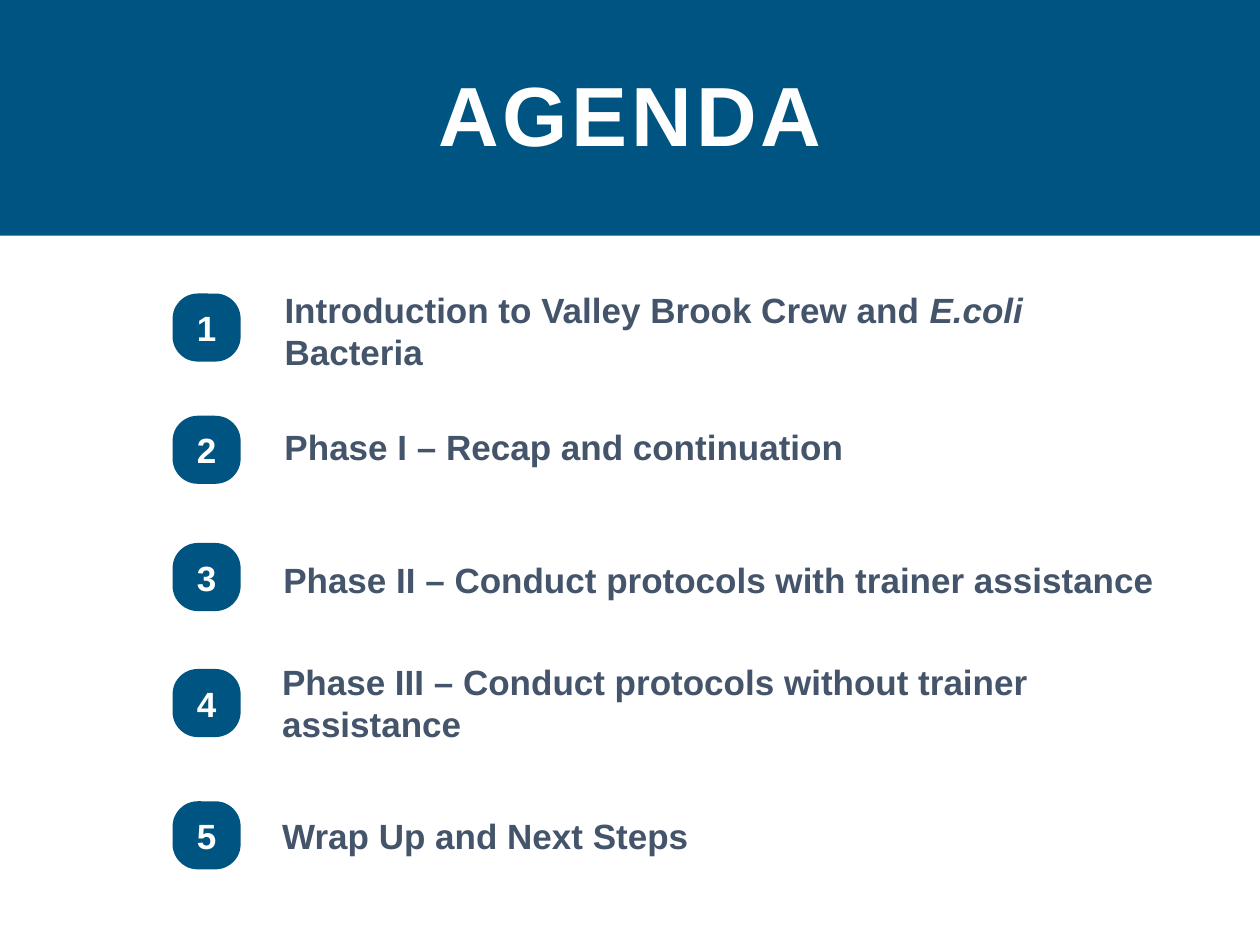
from dataclasses import dataclass
from typing import Optional

from pptx import Presentation
from pptx.dml.color import RGBColor
from pptx.enum.shapes import MSO_SHAPE
from pptx.enum.text import MSO_ANCHOR, PP_ALIGN
from pptx.util import Emu, Pt

PX = 9144
COLORS = {"blue": "005481", "slate": "44546A", "white": "FFFFFF"}
BADGE_LEFT, BADGE_SIZE = 137, 54


@dataclass
class AgendaItem:
    badge_top: int
    left: int
    top: int
    width: int
    height: int
    text: str
    italic: Optional[str] = None


ITEMS = [
    AgendaItem(233, 216, 224, 692, 77,
               "Introduction to Valley Brook Crew and E.coli Bacteria", "E.coli "),
    AgendaItem(330, 216, 332, 467, 44, "Phase I – Recap and continuation"),
    AgendaItem(431, 215, 438, 724, 44,
               "Phase II – Conduct protocols with trainer assistance"),
    AgendaItem(531, 214, 519, 668, 77,
               "Phase III – Conduct protocols without trainer assistance"),
    AgendaItem(636, 214, 641, 345, 44, "Wrap Up and Next Steps"),
]


def px(n: int) -> Emu:
    return Emu(n * PX)


def style(p, size: int, color: str) -> None:
    p.font.name = "Arial"
    p.font.size = Pt(size)
    p.font.bold = True
    p.font.color.rgb = RGBColor.from_string(COLORS[color])


def add_block(s, kind: MSO_SHAPE, left: int, top: int, width: int, height: int):
    sp = s.shapes.add_shape(kind, px(left), px(top), px(width), px(height))
    sp.shadow.inherit = False
    sp.fill.solid()
    sp.fill.fore_color.rgb = RGBColor.from_string(COLORS["blue"])
    sp.line.fill.background()
    return sp


def add_title(s, text: str) -> None:
    sp = add_block(s, MSO_SHAPE.RECTANGLE, 0, 0, 1000, 187)
    tf = sp.text_frame
    tf.vertical_anchor = MSO_ANCHOR.TOP
    tf.margin_top = px(67)
    p = tf.paragraphs[0]
    p.alignment = PP_ALIGN.CENTER
    p.line_spacing = Pt(45)
    style(p, 48, "white")
    r = p.add_run()
    r.text = text
    r._r.get_or_add_rPr().set("spc", "220")


def add_badge(s, number: int, top: int) -> None:
    sp = add_block(s, MSO_SHAPE.ROUNDED_RECTANGLE, BADGE_LEFT, top, BADGE_SIZE, BADGE_SIZE)
    sp.adjustments[0] = 0.37
    tf = sp.text_frame
    tf.margin_left = tf.margin_right = 0
    tf.vertical_anchor = MSO_ANCHOR.MIDDLE
    p = tf.paragraphs[0]
    p.alignment = PP_ALIGN.CENTER
    style(p, 20, "white")
    p.add_run().text = str(number)


def add_label(s, item: AgendaItem) -> None:
    sp = s.shapes.add_textbox(px(item.left), px(item.top), px(item.width), px(item.height))
    tf = sp.text_frame
    tf.word_wrap = True
    tf.vertical_anchor = MSO_ANCHOR.MIDDLE
    p = tf.paragraphs[0]
    style(p, 20, "slate")
    parts = item.text.partition(item.italic) if item.italic else (item.text,)
    for part in parts:
        r = p.add_run()
        r.text = part
        if part == item.italic:
            r.font.italic = True


def main() -> None:
    prs = Presentation()
    prs.slide_width, prs.slide_height = px(1000), px(750)
    s = prs.slides.add_slide(prs.slide_layouts[6])
    add_title(s, "AGENDA")
    for number, item in enumerate(ITEMS, start=1):
        add_badge(s, number, item.badge_top)
        add_label(s, item)
    prs.save("out.pptx")


if __name__ == "__main__":
    main()
